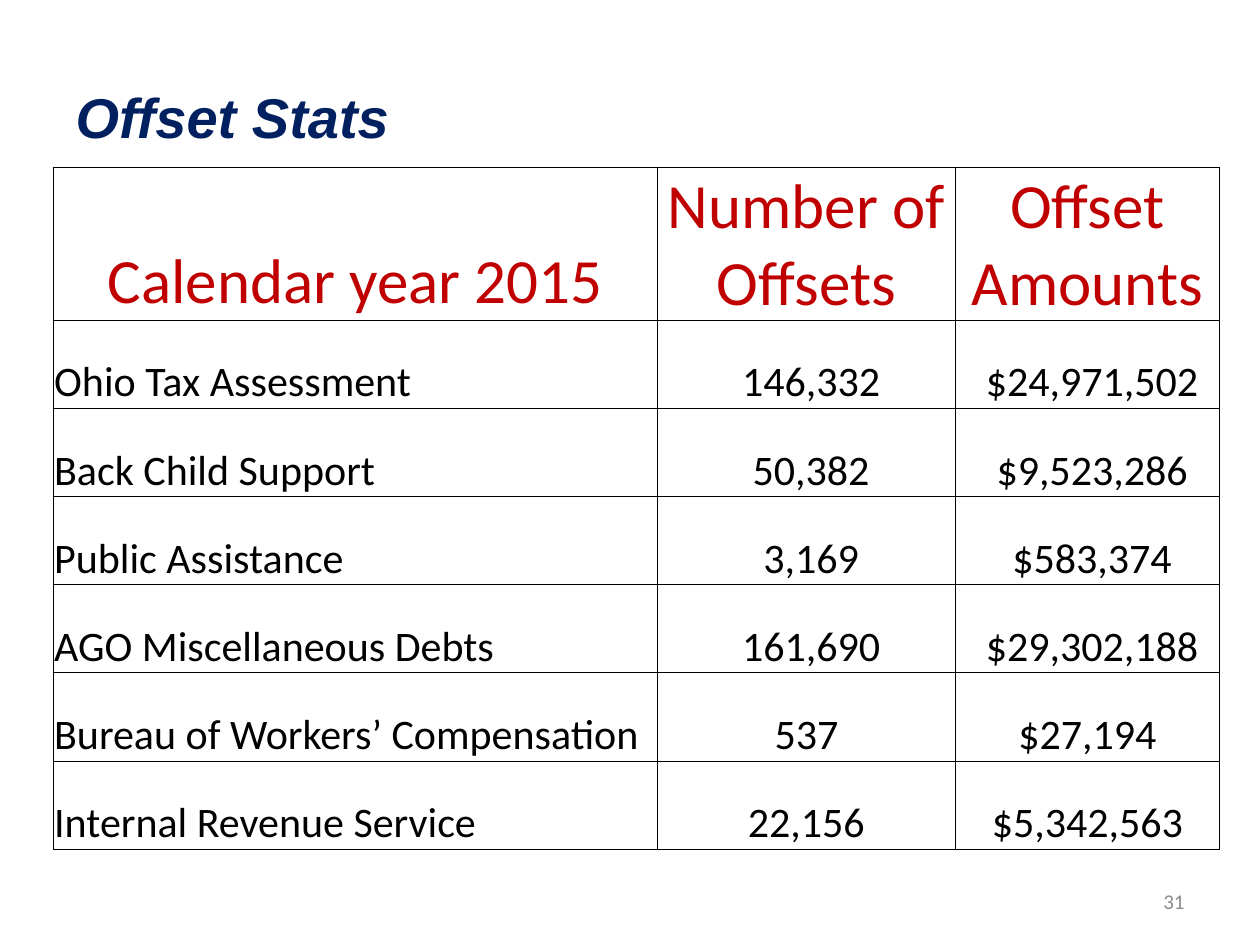
import dataclasses

import pptx
import pptx.dml.color
import pptx.enum.text
import pptx.oxml
import pptx.oxml.ns
import pptx.util

ALIGN = pptx.enum.text.PP_ALIGN
ANCHOR = pptx.enum.text.MSO_ANCHOR
INCH = pptx.util.Inches

HEADER = ("Calendar year 2015", "Number of Offsets", "Offset Amounts")
OFFSETS = (
    ("Ohio Tax Assessment", " 146,332", " $24,971,502"),
    ("Back Child Support", " 50,382", " $9,523,286"),
    ("Public Assistance", " 3,169", " $583,374"),
    ("AGO Miscellaneous Debts", " 161,690", " $29,302,188"),
    ("Bureau of Workers’ Compensation", "537", "$27,194"),
    ("Internal Revenue Service", "22,156", "$5,342,563"),
)
COLUMN_WIDTHS = (4.8, 2.36, 2.1)
HEADER_HEIGHT, ROW_HEIGHT = 1.12, 0.7


@dataclasses.dataclass(frozen=True)
class Style:
    """Font, size and colour of one kind of text."""

    font: str
    size: int
    color: str
    bold: bool = False
    italic: bool = False


@dataclasses.dataclass(frozen=True)
class Theme:
    """Text styles and border of the slide."""

    title: Style = Style("Arial", 32, "002060", True, True)
    header: Style = Style("Calibri", 36, "C00000")
    body: Style = Style("Calibri", 24, "000000")
    number: Style = Style("Calibri", 12, "8C8C8C")
    border: str = "000000"
    border_width: float = 0.5


THEME = Theme()


def write(tf, text, style, align, anchor):
    """Put one styled run into a text frame."""
    tf.word_wrap = True
    tf.vertical_anchor = anchor
    p = tf.paragraphs[0]
    p.alignment = align
    r = p.add_run()
    r.text = text
    r.font.name = style.font
    r.font.size = pptx.util.Pt(style.size)
    r.font.bold = style.bold
    r.font.italic = style.italic
    r.font.color.rgb = pptx.dml.color.RGBColor.from_string(style.color)


def add_title(s, text):
    """Move the title placeholder and fill it."""
    sp = s.shapes.title
    sp.left, sp.top, sp.width, sp.height = map(INCH, (0.5, 0.3, 9, 1.25))
    write(sp.text_frame, text, THEME.title, ALIGN.LEFT, ANCHOR.MIDDLE)


def add_page_number(s, text):
    """Add the page number at the lower right."""
    sp = s.shapes.add_textbox(*map(INCH, (7.17, 6.95, 2.33, 0.4)))
    write(sp.text_frame, text, THEME.number, ALIGN.RIGHT, ANCHOR.MIDDLE)


def add_borders(cell):
    """Draw a thin line on all four sides of a cell."""
    props = cell._tc.get_or_add_tcPr()
    width = pptx.util.Pt(THEME.border_width)
    for index, side in enumerate(("lnL", "lnR", "lnT", "lnB")):
        line = pptx.oxml.parse_xml(
            f'<a:{side} {pptx.oxml.ns.nsdecls("a")} w="{width}"><a:solidFill>'
            f'<a:srgbClr val="{THEME.border}"/></a:solidFill></a:{side}>'
        )
        props.insert(index, line)


def fill_cell(cell, text, style, align):
    """Format one table cell and write its text."""
    cell.fill.background()
    cell.margin_left = cell.margin_right = cell.margin_top = INCH(0.01)
    cell.margin_bottom = 0
    write(cell.text_frame, text, style, align, ANCHOR.BOTTOM)
    cell.vertical_anchor = ANCHOR.BOTTOM
    add_borders(cell)


def add_offset_table(s):
    """Add the table of offsets by kind of debt."""
    rows = (HEADER, *OFFSETS)
    heights = (HEADER_HEIGHT, *[ROW_HEIGHT] * len(OFFSETS))
    size = (sum(COLUMN_WIDTHS), sum(heights))
    frame = s.shapes.add_table(
        len(rows), len(HEADER), *map(INCH, (0.42, 1.33, *size))
    )
    table = frame.table
    table.first_row = table.horz_banding = False
    for column, width in zip(table.columns, COLUMN_WIDTHS):
        column.width = INCH(width)
    for i, (row, height) in enumerate(zip(rows, heights)):
        table.rows[i].height = INCH(height)
        style = THEME.body if i else THEME.header
        for j, text in enumerate(row):
            align = ALIGN.LEFT if i and j == 0 else ALIGN.CENTER
            fill_cell(table.cell(i, j), text, style, align)


def main():
    """Build the slide and save it."""
    prs = pptx.Presentation()
    prs.slide_width, prs.slide_height = INCH(10), INCH(7.5)
    s = prs.slides.add_slide(prs.slide_layouts[5])
    add_title(s, "Offset Stats")
    add_page_number(s, "31")
    add_offset_table(s)
    prs.save("out.pptx")


if __name__ == "__main__":
    main()
